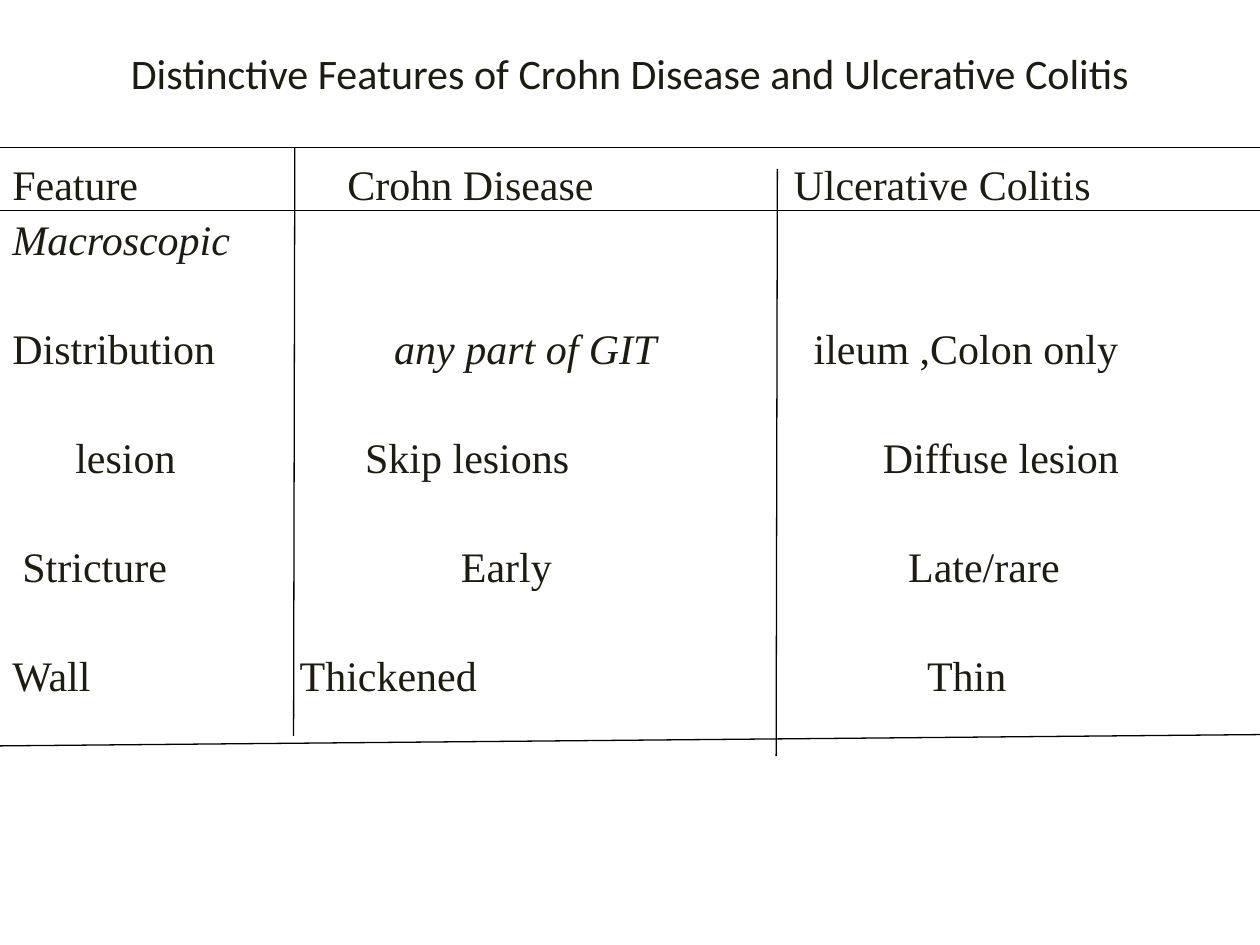
from dataclasses import dataclass

from lxml import etree
from pptx import Presentation
from pptx.dml.color import RGBColor
from pptx.enum.shapes import MSO_CONNECTOR
from pptx.enum.text import MSO_ANCHOR, PP_ALIGN
from pptx.oxml.ns import qn
from pptx.util import Inches, Pt

STRAIGHT = MSO_CONNECTOR.STRAIGHT
TOP = MSO_ANCHOR.TOP
LEFT, CENTER = PP_ALIGN.LEFT, PP_ALIGN.CENTER
TITLE_ONLY = 5


@dataclass(frozen=True)
class Theme:
    ink: RGBColor = RGBColor(0x1E, 0x1C, 0x11)
    rule: RGBColor = RGBColor(0, 0, 0)
    title_font: str = "Calibri"
    body_font: str = "Times New Roman"
    size: Pt = Pt(24)
    rule_width: Pt = Pt(0.75)
    line_spacing: float = 0.9
    gap: Pt = Pt(5.8)
    wide_gap: Pt = Pt(36.4)


def apply(target, formats):
    for name, value in formats.items():
        setattr(target, name, value)


class SlideBuilder:
    def __init__(self, prs, theme):
        self.theme = theme
        self.s = prs.slides.add_slide(prs.slide_layouts[TITLE_ONLY])

    def style_run(self, r, font, italic=False):
        apply(r.font, {"name": font, "size": self.theme.size, "italic": italic})
        r.font.color.rgb = self.theme.ink

    def title(self, text, x, y, w, h):
        sp = self.s.shapes.title
        apply(sp, {"left": Inches(x), "top": Inches(y),
                   "width": Inches(w), "height": Inches(h)})
        tf = sp.text_frame
        apply(tf, {"word_wrap": True, "vertical_anchor": TOP,
                   "margin_top": Inches(0.08)})
        p = tf.paragraphs[0]
        p.alignment = CENTER
        r = p.add_run()
        r.text = text
        self.style_run(r, self.theme.title_font)

    def tabbed_rows(self, rows, x, y, w, h):
        """Each row is (space before, cells); a cell is (indent, text, italic)."""
        tf = self.s.shapes.add_textbox(
            Inches(x), Inches(y), Inches(w), Inches(h)).text_frame
        apply(tf, {"word_wrap": True, "vertical_anchor": TOP})
        for i, (space, cells) in enumerate(rows):
            p = tf.add_paragraph() if i else tf.paragraphs[0]
            apply(p, {"alignment": LEFT, "space_before": space,
                      "line_spacing": self.theme.line_spacing})
            self.tab_stops(p, [indent for indent, *_ in cells if indent])
            for indent, text, italic in cells:
                r = p.add_run()
                r.text = f"\t{text}" if indent else text
                self.style_run(r, self.theme.body_font, italic)

    def tab_stops(self, p, stops):
        if not stops:
            return
        tabs = etree.SubElement(p._p.get_or_add_pPr(), qn("a:tabLst"))
        for stop in stops:
            etree.SubElement(tabs, qn("a:tab"), pos=str(Inches(stop)), algn="l")

    def line(self, x1, y1, x2, y2):
        c = self.s.shapes.add_connector(
            STRAIGHT, Inches(x1), Inches(y1), Inches(x2), Inches(y2))
        c.line.color.rgb = self.theme.rule
        c.line.width = self.theme.rule_width
        etree.SubElement(c._element.spPr, qn("a:effectLst"))


def main():
    prs = Presentation()
    prs.slide_width, prs.slide_height = Inches(10), Inches(7.5)
    theme = Theme()
    slide = SlideBuilder(prs, theme)

    slide.title("Distinctive Features of Crohn Disease and Ulcerative Colitis",
                0.5, 0.3, 9, 1.25)

    rows = [
        (Pt(0), [(0, "Feature", False), (2.66, "Crohn Disease", False),
                 (6.2, "Ulcerative Colitis", False)]),
        (theme.gap, [(0, "Macroscopic", True)]),
        (theme.wide_gap, [(0, "Distribution", False), (3.03, "any part of GIT", True),
                          (6.36, "ileum ,Colon only", False)]),
        (theme.wide_gap, [(0.5, "lesion", False), (2.8, "Skip lesions", False),
                          (6.91, "Diffuse lesion", False)]),
        (theme.wide_gap, [(0.08, "Stricture", False), (3.56, "Early", False),
                          (7.11, "Late/rare", False)]),
        (theme.wide_gap, [(0, "Wall", False), (2.28, "Thickened", False),
                          (7.26, "Thin", False)]),
    ]
    slide.tabbed_rows(rows, 0, 1.25, 10, 5.42)

    for ends in [(2.34, 1.17, 2.33, 5.84), (6.17, 1.34, 6.16, 6),
                 (0, 1.17, 10, 1.17), (0, 5.92, 10, 5.83), (0, 1.67, 10, 1.67)]:
        slide.line(*ends)

    prs.save("out.pptx")


if __name__ == "__main__":
    main()
